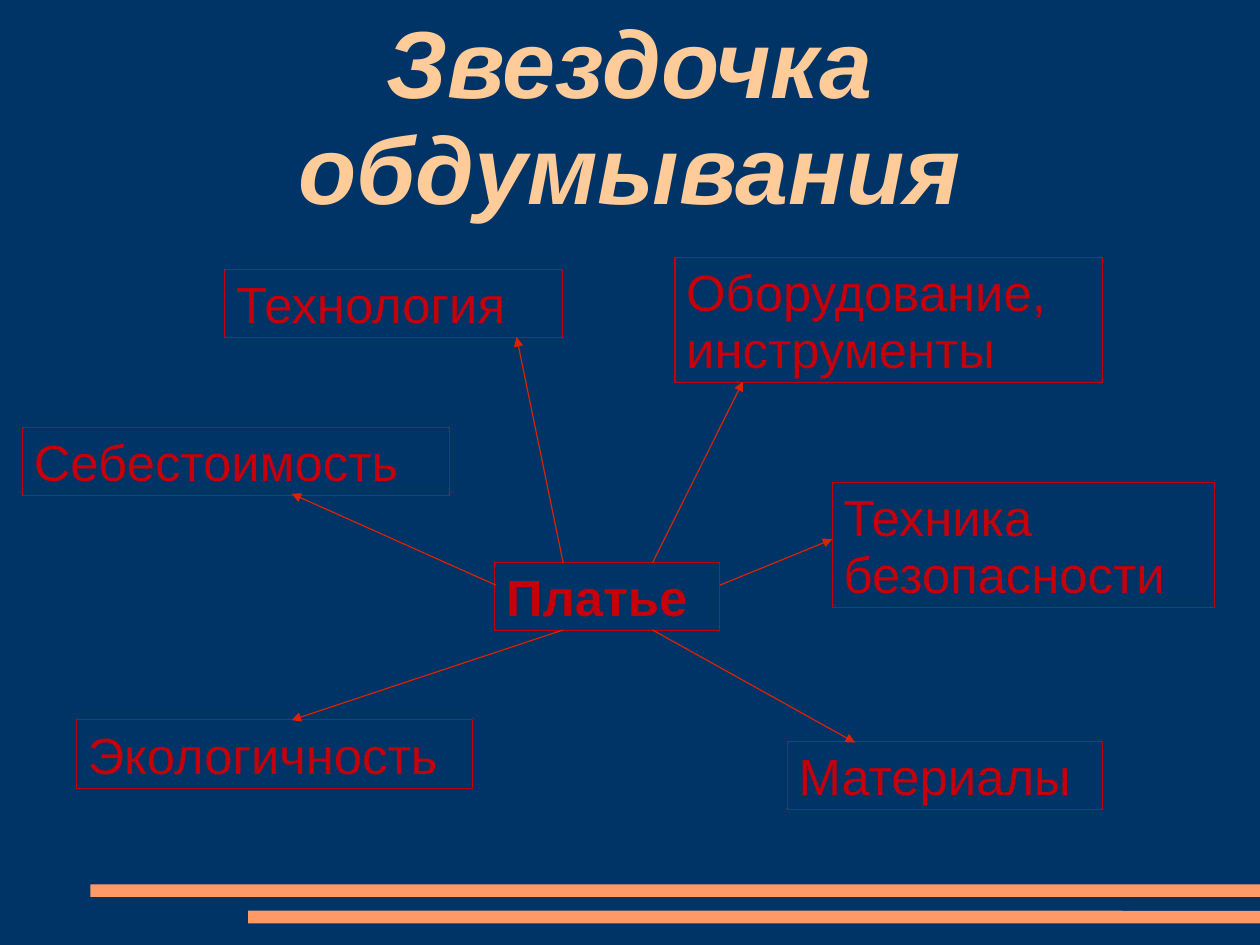
"""Build the star diagram of topics to think through for a dress."""
from lxml import etree
from pptx import Presentation
from pptx.dml.color import RGBColor
from pptx.enum import shapes, text
from pptx.oxml import ns
from pptx.util import Pt

SIZE = (793.7, 595.28)
COLORS = {"back": "003366", "bar": "FF9966", "title": "FFCC99",
          "box": "C5000B", "arrow": "DC2300"}
TITLE = ("Звездочка обдумывания", (39.6, 4.2, 714, 138))
BARS = [(57, 557.1), (156.3, 573.7)]
BAR_HEIGHT = 7.9
HUB = ("Платье", (311.7, 354.2), 141.7, 1)
TOPICS = [
    ("Технология", (141.7, 169.7), 212.6, 1),
    ("Оборудование, инструменты", (425.2, 162), 269.3, 2),
    ("Техника безопасности", (524.3, 303.8), 241, 2),
    ("Материалы", (496, 467), 198.5, 1),
    ("Себестоимость", (14.2, 269.2), 269.2, 1),
    ("Экологичность", (48.2, 453.5), 249.6, 1),
]
BOX_HEIGHT = {1: 43, 2: 79}
ARROWS = [
    ((354.8, 354.6), (325.4, 212.3)),
    ((411, 354.6), (468, 240.4)),
    ((354.8, 396.8), (183.7, 453.6)),
    ((411, 396.8), (538.6, 467.8)),
    ((312.4, 368.6), (183.7, 311)),
    ((453.5, 368.6), (524.3, 339.7)),
]
TITLE_FONT = {"name": "Arial", "size": Pt(60), "bold": True, "italic": True}
BOX_FONT = {"name": "Arial", "size": Pt(32)}
TITLE_FRAME = {"word_wrap": True, "vertical_anchor": text.MSO_ANCHOR.MIDDLE,
               "margin_left": 0, "margin_right": 0,
               "margin_top": Pt(4.3), "margin_bottom": 0}
BOX_FRAME = {"word_wrap": True, "vertical_anchor": text.MSO_ANCHOR.TOP,
             "margin_left": Pt(7.2), "margin_right": Pt(7.2),
             "margin_top": Pt(5.6), "margin_bottom": Pt(3.6)}


def rgb(name):
    return RGBColor.from_string(COLORS[name])


def assign(target, values):
    for key, value in values.items():
        setattr(target, key, value)


def write(sp, words, frame, font, color, align):
    tf = sp.text_frame
    assign(tf, frame)
    p = tf.paragraphs[0]
    assign(p, {"alignment": align, "line_spacing": 0.93})
    r = p.add_run()
    r.text = words
    assign(r.font, font)
    r.font.color.rgb = rgb(color)


def add_bar(s, left, top):
    sp = s.shapes.add_shape(shapes.MSO_SHAPE.ROUNDED_RECTANGLE, Pt(left), Pt(top),
                            Pt(SIZE[0] - left), Pt(BAR_HEIGHT))
    sp.adjustments[0] = 0.02
    sp.shadow.inherit = False
    sp.fill.solid()
    sp.fill.fore_color.rgb = rgb("bar")
    sp.line.fill.background()


def add_box(s, words, corner, width, rows, bold=False):
    sp = s.shapes.add_shape(shapes.MSO_SHAPE.RECTANGLE, *map(Pt, corner),
                            Pt(width), Pt(BOX_HEIGHT[rows]))
    sp.shadow.inherit = False
    sp.fill.background()
    sp.line.color.rgb = rgb("box")
    sp.line.width = Pt(0.75)
    write(sp, words, BOX_FRAME, {**BOX_FONT, "bold": bold}, "box", text.PP_ALIGN.LEFT)


def add_arrow(s, start, end):
    cx = s.shapes.add_connector(shapes.MSO_CONNECTOR.STRAIGHT, *map(Pt, start + end))
    cx.line.color.rgb = rgb("arrow")
    cx.line.width = Pt(0.75)
    props = cx.element.spPr
    etree.SubElement(props.get_or_add_ln(), ns.qn("a:tailEnd"), type="triangle")
    etree.SubElement(props, ns.qn("a:effectLst"))


def main():
    prs = Presentation()
    prs.slide_width, prs.slide_height = map(Pt, SIZE)
    s = prs.slides.add_slide(prs.slide_layouts[6])
    s.background.fill.solid()
    s.background.fill.fore_color.rgb = rgb("back")
    for left, top in BARS:
        add_bar(s, left, top)
    words, place = TITLE
    write(s.shapes.add_textbox(*map(Pt, place)), words, TITLE_FRAME, TITLE_FONT,
          "title", text.PP_ALIGN.CENTER)
    add_box(s, *HUB, bold=True)
    for topic in TOPICS:
        add_box(s, *topic)
    for start, end in ARROWS:
        add_arrow(s, start, end)
    prs.save("out.pptx")


if __name__ == "__main__":
    main()
